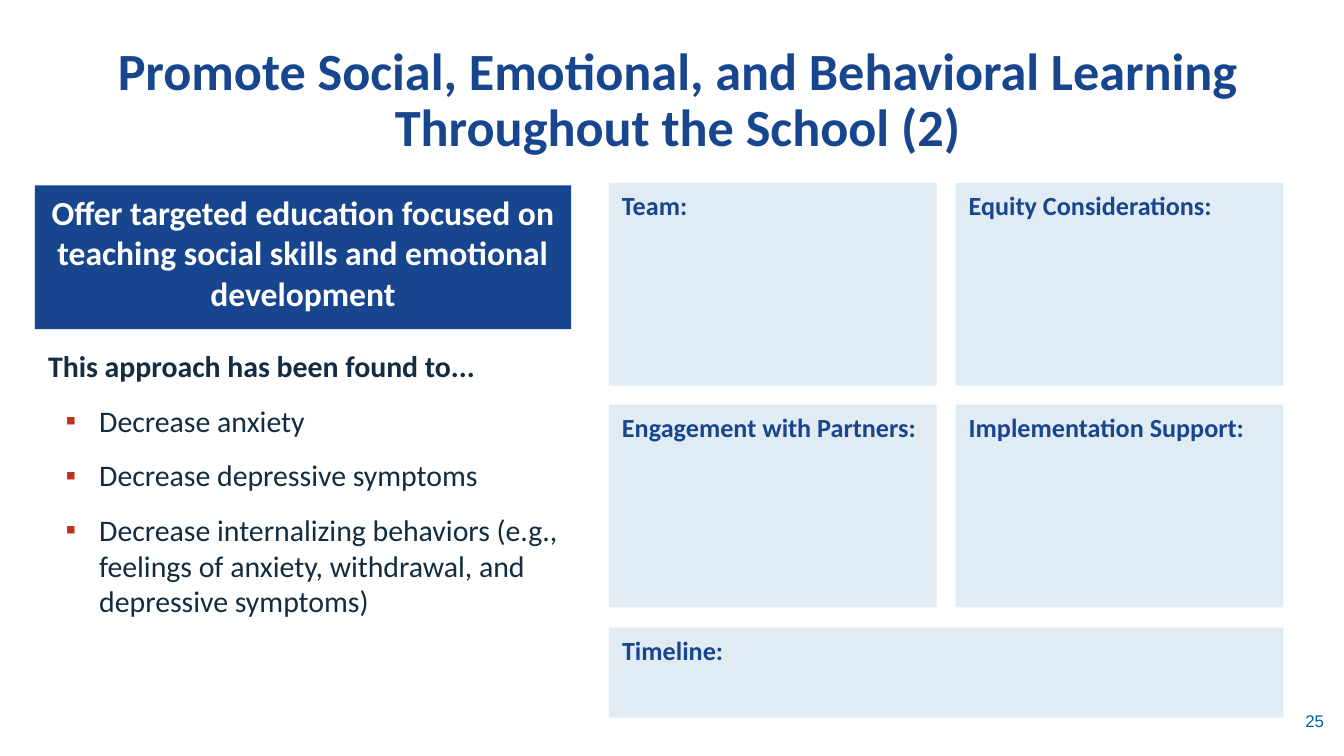
from lxml.etree import SubElement
from pptx import Presentation
from pptx.dml.color import RGBColor
from pptx.enum.shapes import MSO_SHAPE
from pptx.enum.text import MSO_ANCHOR, MSO_AUTO_SIZE, PP_ALIGN
from pptx.oxml.ns import qn
from pptx.util import Inches, Pt

# Content
TITLE = "Promote Social, Emotional, and Behavioral Learning Throughout the School (2)"
STRATEGY = ("Offer targeted education focused on teaching social skills "
            "and emotional development")
FINDINGS_INTRO = "This approach has been found to..."
FINDINGS = [
    "Decrease anxiety",
    "Decrease depressive symptoms",
    "Decrease internalizing behaviors (e.g., feelings of anxiety, "
    "withdrawal, and depressive symptoms)",
]
PLANNING_GRID = [
    ["Team:", "Equity Considerations:"],
    ["Engagement with Partners:", "Implementation Support:"],
]
TIMELINE = "Timeline:"
PAGE_NUMBER = "25"

# Colours
NAVY = RGBColor(0x17, 0x46, 0x8F)
INK = RGBColor(0x12, 0x2C, 0x41)
WHITE = RGBColor(0xFF, 0xFF, 0xFF)
SKY = RGBColor(0x86, 0xB2, 0xD7)
BRICK = RGBColor(0xBF, 0x31, 0x1B)
PAGE_BLUE = RGBColor(0x01, 0x5D, 0xAA)

# Layout, in inches
LEFT, LEFT_WIDTH = 0.26, 3.99
GRID_LEFT, GRID_TOP = 4.53, 1.36
CELL_WIDTH, CELL_HEIGHT = 2.44, 1.51
GAP = 0.14
TIMELINE_TOP, TIMELINE_HEIGHT = 4.67, 0.67


def style(paragraph, size, color, bold=False, font="Calibri", align=PP_ALIGN.LEFT):
    paragraph.alignment = align
    for run in paragraph.runs:
        run.font.name = font
        run.font.size = Pt(size)
        run.font.bold = bold
        run.font.color.rgb = color


def add_panel(text, box, fill, size, color, align=PP_ALIGN.LEFT, opacity=None):
    panel = slide.shapes.add_shape(MSO_SHAPE.RECTANGLE, *map(Inches, box))
    panel.shadow.inherit = False
    panel.line.fill.background()
    panel.fill.solid()
    panel.fill.fore_color.rgb = fill
    if opacity is not None:
        rgb = panel.fill._xPr.find(".//" + qn("a:srgbClr"))
        SubElement(rgb, qn("a:alpha"), val=str(opacity * 1000))
    frame = panel.text_frame
    frame.word_wrap = True
    frame.vertical_anchor = MSO_ANCHOR.TOP
    frame.text = text
    style(frame.paragraphs[0], size, color, True, align=align)


def add_text_box(box):
    frame = slide.shapes.add_textbox(*map(Inches, box)).text_frame
    frame.word_wrap = True
    return frame


def add_bullet(paragraph):
    properties = paragraph._p.get_or_add_pPr()
    properties.set("marL", str(Inches(0.38)))
    properties.set("indent", str(Inches(-0.25)))
    color = SubElement(properties, qn("a:buClr"))
    SubElement(color, qn("a:srgbClr"), val=str(BRICK))
    SubElement(properties, qn("a:buFont"), typeface="Arial")
    SubElement(properties, qn("a:buChar"), char="▪")


# Widescreen slide, 16:9
presentation = Presentation()
presentation.slide_width = Inches(10)
presentation.slide_height = presentation.slide_width * 9 // 16
slide = presentation.slides.add_slide(presentation.slide_layouts[5])

# Title
title = slide.shapes.title
title.left, title.top, title.width, title.height = map(Inches, (0.54, 0.28, 9, 0.94))
title.text_frame.text = TITLE
title.text_frame.auto_size = MSO_AUTO_SIZE.NONE
title.text_frame.vertical_anchor = MSO_ANCHOR.BOTTOM
title.text_frame.paragraphs[0].line_spacing = Pt(30)
style(title.text_frame.paragraphs[0], 28, NAVY, True, align=PP_ALIGN.CENTER)

# Strategy banner
add_panel(STRATEGY, (LEFT, 1.38, LEFT_WIDTH, 1.07), NAVY, 18, WHITE, PP_ALIGN.CENTER)

# Findings
findings = add_text_box((LEFT, 2.54, LEFT_WIDTH, 2.27))
findings.text = FINDINGS_INTRO
style(findings.paragraphs[0], 16, INK, True)
for finding in FINDINGS:
    item = findings.add_paragraph()
    item.text = finding
    add_bullet(item)
    item.space_before = Pt(10)
    style(item, 16, INK)

# Planning grid with the timeline below it
for row, labels in enumerate(PLANNING_GRID):
    for column, label in enumerate(labels):
        cell = (GRID_LEFT + column * (CELL_WIDTH + GAP),
                GRID_TOP + row * (CELL_HEIGHT + GAP), CELL_WIDTH, CELL_HEIGHT)
        add_panel(label, cell, SKY, 14, NAVY, opacity=25)
add_panel(TIMELINE, (GRID_LEFT, TIMELINE_TOP, 2 * CELL_WIDTH + GAP, TIMELINE_HEIGHT),
          SKY, 14, NAVY, opacity=25)

# Page number
page_number = add_text_box((9.09, 5.24, 0.86, 0.3))
page_number.text = PAGE_NUMBER
style(page_number.paragraphs[0], 9, PAGE_BLUE, font="Arial", align=PP_ALIGN.RIGHT)

presentation.save("out.pptx")
